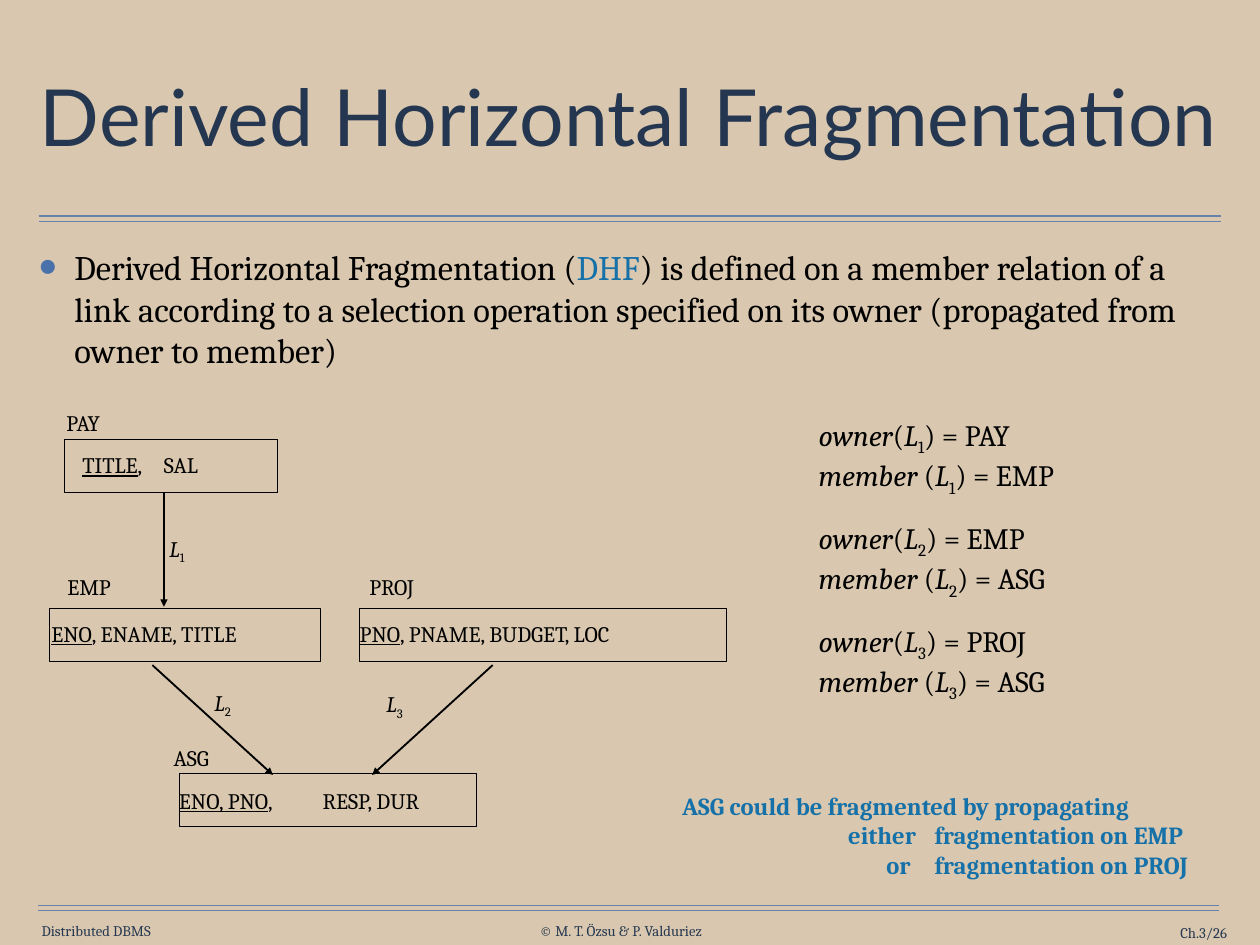
from lxml import etree
from pptx import Presentation
from pptx.dml.color import RGBColor
from pptx.enum import shapes, text
from pptx.oxml import ns
from pptx.util import Inches, Pt

SAND = RGBColor(0xD9, 0xC8, 0xAF)
NAVY = RGBColor(0x25, 0x37, 0x50)
RULE = RGBColor(0x66, 0x82, 0xAA)
BLUE = RGBColor(0x17, 0x71, 0xA9)
BLACK = RGBColor(0, 0, 0)

LEFT, RIGHT = text.PP_ALIGN.LEFT, text.PP_ALIGN.RIGHT
TOP, MIDDLE = text.MSO_ANCHOR.TOP, text.MSO_ANCHOR.MIDDLE

UNDER = {"underline": True}
ITALIC = {"italic": True}
SUB = {"baseline": "-25000"}

# Box outline, name position, name, and the field texts with their positions
TABLES = [
    ((0.73, 4.96, 2.4), (0.61, 4.55), "PAY",
     [((0.79, 5.03), [("TITLE", UNDER), (",", {})]),
      ((1.71, 5.03), [("SAL", {})])]),
    ((0.56, 6.87, 3.06), (0.62, 6.4), "EMP",
     [((0.44, 6.93), [("ENO", UNDER), (", ENAME, TITLE", {})])]),
    ((4.06, 6.87, 4.14), (4.03, 6.4), "PROJ",
     [((3.92, 6.93), [("PNO", UNDER), (", PNAME, BUDGET, LOC", {})])]),
    ((2.03, 8.73, 3.35), (1.82, 8.34), "ASG",
     [((1.88, 8.82), [("ENO, PNO", UNDER), (",", {})]),
      ((3.5, 8.82), [("RESP, DUR", {})])]),
]
# Arrow ends, label position, owner, member
LINKS = [
    ((1.85, 5.56, 1.85, 6.85), (1.77, 5.97), "PAY", "EMP"),
    ((1.72, 7.51, 3.08, 8.75), (2.28, 7.71), "EMP", "ASG"),
    ((5.56, 7.51, 4.2, 8.75), (4.22, 7.73), "PROJ", "ASG"),
]


def add_xml(parent, tag, **attrs):
    return etree.SubElement(parent, ns.qn(tag), attrs)


def place(shape, at):
    for name, size in zip(("left", "top", "width", "height"), at):
        setattr(shape, name, Inches(size))


def frame(shape, inset, anchor=TOP):
    """Fix the wrapping, insets and anchor of a shape's text."""
    body = shape.text_frame
    look = {"word_wrap": True, "auto_size": text.MSO_AUTO_SIZE.NONE,
            "vertical_anchor": anchor}
    for side, size in zip(("left", "top", "right", "bottom"), inset):
        look["margin_" + side] = Inches(size)
    for name, value in look.items():
        setattr(body, name, value)
    return body


def write(para, runs, size, color=BLACK, face="Cambria", align=LEFT):
    """Add (text, format) runs; a newline in a text is a line break."""
    para.alignment = align
    for words, extra in runs:
        for num, line in enumerate(words.split("\n")):
            if num:
                para.add_line_break()
            if not line:
                continue
            run = para.add_run()
            run.text = line
            look = {"name": face, "size": Pt(size), **extra}
            run.font.color.rgb = look.pop("color", color)
            base = look.pop("baseline", None)
            if base:
                run._r.get_or_add_rPr().set("baseline", base)
            for name, value in look.items():
                setattr(run.font, name, value)


def add_text(slide, at, inset=(0.1, 0.05, 0.1, 0.05), anchor=TOP):
    box = slide.shapes.add_textbox(*map(Inches, at))
    return frame(box, inset, anchor)


def add_label(slide, spot, runs, width):
    body = add_text(slide, (*spot, width, 0.53), (0.14, 0.07, 0.14, 0.07))
    write(body.paragraphs[0], runs, 18)


def add_line(slide, ends, color, width, arrow=False):
    line = slide.shapes.add_connector(
        shapes.MSO_CONNECTOR.STRAIGHT, *map(Inches, ends))
    line.line.color.rgb = color
    line.line.width = Pt(width)
    if arrow:
        add_xml(line.line._get_or_add_ln(), "a:tailEnd", type="triangle")
    add_xml(line._element.spPr, "a:effectLst")


def add_table_box(slide, box, spot, name, fields):
    rect = slide.shapes.add_shape(
        shapes.MSO_SHAPE.RECTANGLE, *map(Inches, (*box, 0.6)))
    rect.shadow.inherit = False
    rect.fill.background()
    rect.line.color.rgb = BLACK
    rect.line.width = Pt(1)
    add_label(slide, spot, [(name, {})], 1.2)
    for place_at, runs in fields:
        add_label(slide, place_at, runs, box[2] + 0.3)


def add_head(slide):
    title = slide.shapes.title
    place(title, (0.39, 0.49, 13.44, 1.76))
    para = frame(title, [0.06] * 4, MIDDLE).paragraphs[0]
    para.line_spacing = 0.9
    write(para, [("Derived Horizontal Fragmentation", {})], 64, NAVY, "Lato")


def add_body(slide):
    body = slide.placeholders[1]
    place(body, (0.38, 2.72, 13.44, 1.6))
    para = frame(body, [0.06] * 4).paragraphs[0]
    para.space_before = Pt(0)
    props = para._p.get_or_add_pPr()
    props.set("marL", str(Inches(0.4)))
    props.set("indent", str(Inches(-0.4)))
    add_xml(add_xml(props, "a:buClr"), "a:srgbClr", val="4A71A9")
    add_xml(props, "a:buSzPct", val="150000")
    add_xml(props, "a:buChar", char="•")
    write(para, [
        ("Derived Horizontal Fragmentation (", {}),
        ("DHF", {"color": BLUE}),
        (") is defined on a member relation of a link according to a "
         "selection operation specified on its owner (propagated from "
         "owner to member)", {})], 28)


def add_roles(slide):
    """List the owner and member of each link."""
    body = add_text(slide, (9.14, 4.66, 4, 3.03))
    for num, (_, _, owner, member) in enumerate(LINKS, 1):
        para = body.paragraphs[0] if num == 1 else body.add_paragraph()
        para.space_before = Pt(0 if num == 1 else 18)
        link = [("(", {}), ("L", ITALIC), (str(num), SUB)]
        write(para, [("owner", ITALIC), *link, (f") = {owner}\n", {}),
                     ("member ", ITALIC), *link, (f") = {member}", {})], 24)


def add_note(slide):
    para = add_text(slide, (7.6, 8.88, 6.24, 1.11)).paragraphs[0]
    tabs = add_xml(para._p.get_or_add_pPr(), "a:tabLst")
    for pos, side in ((2.64, "r"), (2.85, "l")):
        add_xml(tabs, "a:tab", pos=str(Inches(pos)), algn=side)
    words = ("ASG could be fragmented by propagating\n"
             "\teither\tfragmentation on EMP\n"
             "\tor \tfragmentation on PROJ")
    write(para, [(words, {"bold": True})], 20, BLUE)


def add_foot(slide):
    for at, words, align in (
            ((0.47, 10.41, 2, 0.2), "Distributed DBMS", LEFT),
            ((6.09, 10.41, 3, 0.2), "© M. T. Özsu & P. Valduriez", LEFT),
            ((12.31, 10.43, 1.54, 0.2), "Ch.3/26", RIGHT)):
        para = add_text(slide, at, [0] * 4, MIDDLE).paragraphs[0]
        write(para, [(words, {})], 12, NAVY, align=align)


def main():
    deck = Presentation()
    deck.slide_width, deck.slide_height = Inches(14.22), Inches(10.67)
    slide = deck.slides.add_slide(deck.slide_layouts[1])
    slide.background.fill.solid()
    slide.background.fill.fore_color.rgb = SAND
    for left, right, top in ((0.44, 13.78, 2.44), (0.43, 13.76, 10.22)):
        for y in (top, top + 0.06):
            add_line(slide, (left, y, right, y), RULE, 1)
    add_head(slide)
    add_body(slide)
    for table in TABLES:
        add_table_box(slide, *table)
    for num, (ends, spot, _, _) in enumerate(LINKS, 1):
        add_label(slide, spot, [("L", ITALIC), (str(num), SUB)], 0.61)
        add_line(slide, ends, BLACK, 1.5, arrow=True)
    add_roles(slide)
    add_note(slide)
    add_foot(slide)
    deck.save("out.pptx")


if __name__ == "__main__":
    main()
